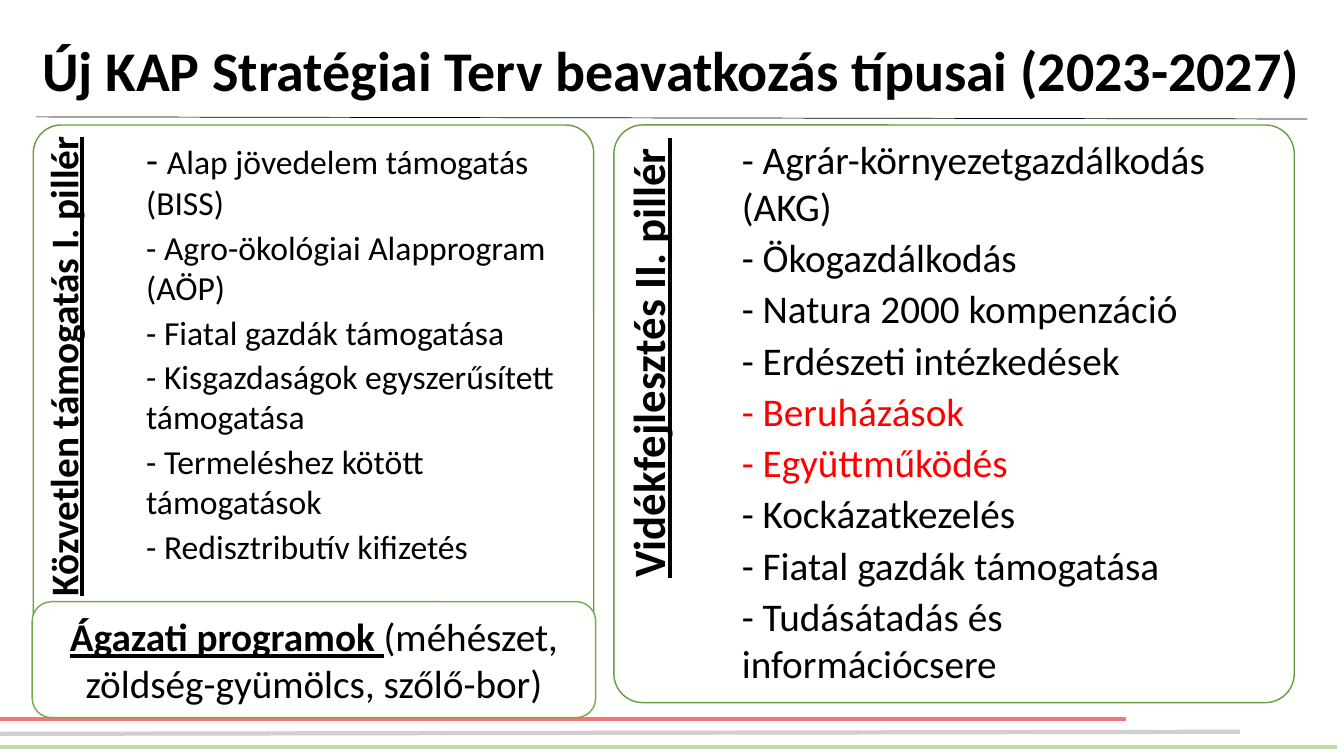
from pptx import Presentation
from pptx.util import Pt
from pptx.dml.color import RGBColor as Rgb
from pptx.enum.shapes import MSO_CONNECTOR as Conn, MSO_SHAPE as Form
from pptx.enum.text import MSO_ANCHOR as Anchor, PP_ALIGN as Align
from pptx.oxml.ns import qn
from lxml.etree import SubElement as sub

INK = {"black": "000000", "white": "FFFFFF", "red": "FF0000",
       "coral": "F97376", "mint": "BEDCAA", "grey": "D0CECE",
       "leaf": "669D40", "green": "70AD47"}


class Page:
    """Holds the style and the current slide."""
    face = "Calibri"

    def __init__(self, slide):
        self.shapes = slide.shapes

    def tint(self, name):
        return Rgb.from_string(INK[name])

    def line(self, x1, y1, x2, y2, ink, width):
        rule = self.shapes.add_connector(Conn.STRAIGHT, Pt(x1), Pt(y1), Pt(x2), Pt(y2))
        rule.line.color.rgb = self.tint(ink)
        rule.line.width = Pt(width)
        sub(rule._element.spPr, qn("a:effectLst"))

    def panel(self, x, y, w, h, ink, curve=None):
        card = self.shapes.add_shape(Form.ROUNDED_RECTANGLE, Pt(x), Pt(y), Pt(w), Pt(h))
        card.shadow.inherit = False
        card.fill.solid()
        card.fill.fore_color.rgb = self.tint("white")
        card.line.color.rgb = self.tint(ink)
        card.line.width = Pt(1)
        if curve is not None:
            card.adjustments[0] = curve
        return card

    def label(self, shape, paras, form=None, pads=(7.2, 3.6, 7.2, 3.6), anchor=Anchor.TOP):
        """Each paragraph is a list of (text, font values) runs."""
        frame = shape.text_frame
        frame.word_wrap = True
        frame.vertical_anchor = anchor
        for side, pad in zip(("left", "top", "right", "bottom"), pads):
            setattr(frame, f"margin_{side}", Pt(pad))
        for i, runs in enumerate(paras):
            para = frame.add_paragraph() if i else frame.paragraphs[0]
            for key, value in (form or {}).items():
                setattr(para, key, value)
            for text, values in runs:
                run = para.add_run()
                run.text = text
                style = {"ink": "black", **values}
                run.font.color.rgb = self.tint(style.pop("ink"))
                run.font.name = self.face
                for key, value in style.items():
                    setattr(run.font, key, value)

    def text(self, x, y, w, h, paras, form=None, turn=0, **rest):
        box = self.shapes.add_textbox(Pt(x), Pt(y), Pt(w), Pt(h))
        box.rotation = turn
        self.label(box, paras, form, **rest)

    def pillar(self, x, w, name, size, deep, pad, left, wide, items):
        """A panel with an upright heading and a list."""
        top, high, long, mid = 89.3, 412.6, 338.4, 258.8
        self.panel(x, top, w, high, "leaf", 0.05)
        head = {"size": Pt(size), "bold": True, "underline": True}
        self.text(x + deep / 2 - long / 2, mid - deep / 2, long, deep, [[(name, head)]],
                  {"alignment": Align.RIGHT, "line_spacing": 0.9},
                  turn=270, pads=(0, pad, pad, 0))
        self.text(left, top, wide, high, items, {"space_after": Pt(3)}, pads=(0, 7.2, 0, 0))


deck = Presentation()
deck.slide_width, deck.slide_height = Pt(960), Pt(540)
page = Page(deck.slides.add_slide(deck.slide_layouts[6]))

# Footer stripes and title rule
page.line(0, 513.4, 804.2, 513.4, "coral", 3)
page.line(0, 533.5, 954.7, 533.5, "mint", 3)
page.line(0, 524.2, 885.6, 522.7, "grey", 3)
page.line(25.9, 83.5, 933.8, 85, "black", 0.5)

# Title
page.text(23, 0, 918.7, 105.1,
          [[("Új KAP Stratégiai Terv beavatkozás típusai (2023-2027)",
             {"size": Pt(40), "bold": True})]],
          {"line_spacing": 0.9}, anchor=Anchor.MIDDLE)

# First pillar
big, small = {"size": Pt(28)}, {"size": Pt(24)}
direct = ["Agro-ökológiai Alapprogram (AÖP)", "Fiatal gazdák támogatása",
          "Kisgazdaságok egyszerűsített támogatása",
          "Termeléshez kötött támogatások", "Redisztributív kifizetés"]
first = [("- ", big), ("Alap jövedelem támogatás (BISS)", small)]
page.pillar(23.8, 400.3, "Közvetlen támogatás I. pillér", 28, 79.9, 8, 104.4, 298.8,
            [first] + [[("- " + item, small)] for item in direct])

# Second pillar
rural = ["Agrár-környezetgazdálkodás (AKG)", "Ökogazdálkodás",
         "Natura 2000 kompenzáció", "Erdészeti intézkedések",
         "Beruházások", "Együttműködés", "Kockázatkezelés",
         "Fiatal gazdák támogatása", "Tudásátadás és információcsere"]
marked = {"Beruházások", "Együttműködés"}
page.pillar(438.5, 486, "Vidékfejlesztés II. pillér ", 32, 97.2, 9, 529.9, 362.2,
            [[("- " + item, {**big, "ink": "red" if item in marked else "black"})]
             for item in rural])

# Sector programmes
sector = page.panel(23, 429.8, 402.5, 82.8, "green")
page.label(sector, [[("Ágazati programok ", {**big, "bold": True, "underline": True}),
                     ("(méhészet, zöldség-gyümölcs, szőlő-bor)", big)]],
           {"alignment": Align.CENTER}, anchor=Anchor.MIDDLE)

deck.save("out.pptx")
